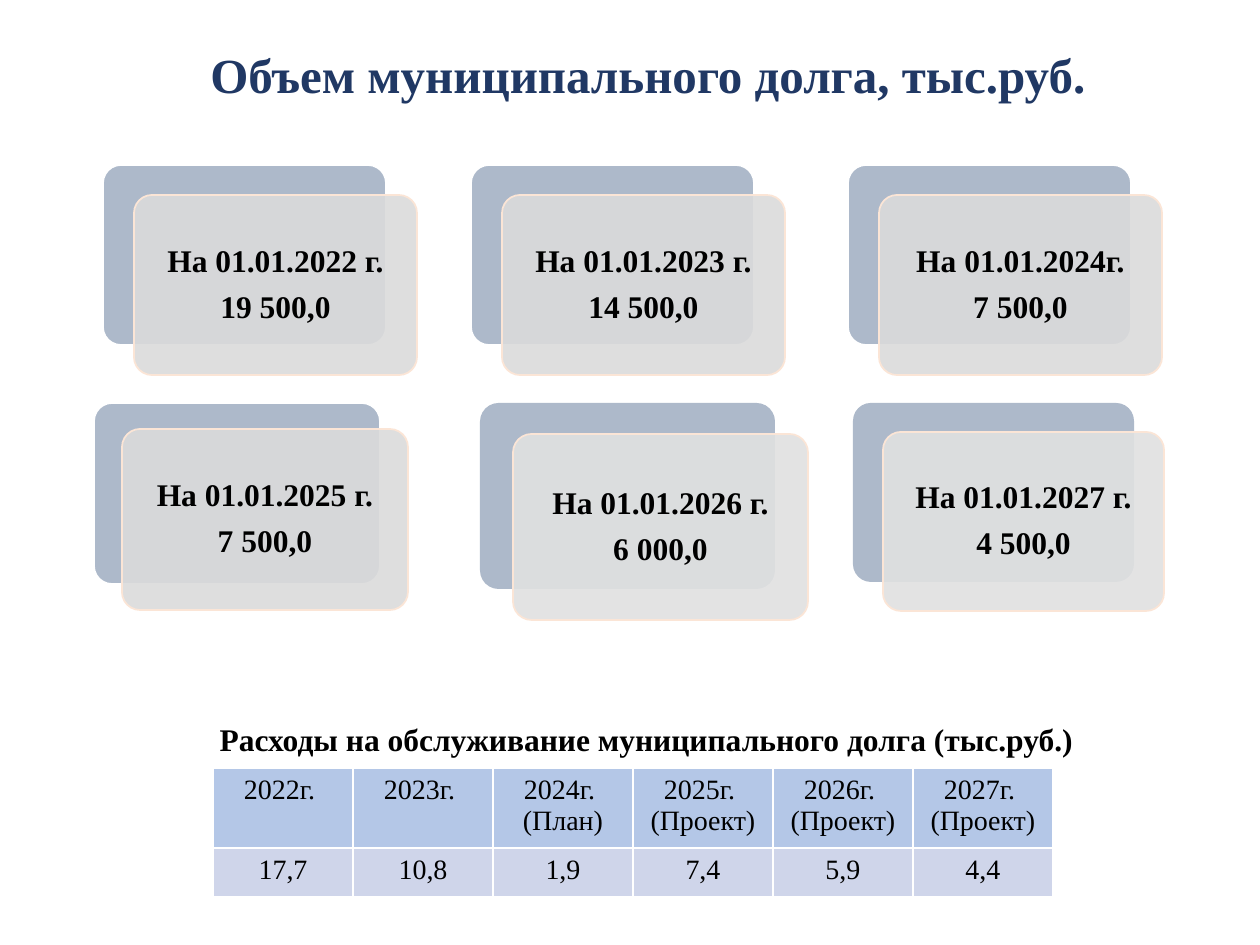
from lxml.etree import SubElement
from pptx import Presentation
from pptx.dml.color import RGBColor
from pptx.enum.shapes import MSO_SHAPE as Preset
from pptx.enum.text import MSO_ANCHOR as Anchor, MSO_AUTO_SIZE as AutoSize, PP_ALIGN as Align
from pptx.oxml.ns import qn
from pptx.util import Emu, Pt

FONT = "Times New Roman"
BLACK, WHITE, NAVY = "000000", "FFFFFF", "203864"
BACK, CARD_EDGE = "ADB9CA", "FBE5D6"
HEADER_FILL, VALUE_FILL = "B4C7E7", "CFD5EA"
PAST = ("DBDBDB", WHITE)
FORECAST = ("E1E1E1", None)

DEBTS = [
    ("На 01.01.2022 г.", "19 500,0", (103, 165, 283, 180), (31, 30), PAST),
    ("На 01.01.2023 г.", "14 500,0", (471, 165, 283, 180), (31, 30), PAST),
    ("На 01.01.2024г.", "7 500,0", (848, 165, 283, 180), (31, 30), PAST),
    ("На 01.01.2025 г.", "7 500,0", (94, 403, 286, 181), (28, 26), PAST),
    ("На 01.01.2026 г.", "6 000,0", (480, 403, 295, 186), (33, 31), FORECAST),
    ("На 01.01.2027 г.", "4 500,0", (853, 403, 281, 179), (30, 29), FORECAST),
]
COSTS = [
    (["2022г. "], "17,7"),
    (["2023г. "], "10,8"),
    (["2024г. ", "(План)"], "1,9"),
    (["2025г. ", "(Проект)"], "7,4"),
    (["2026г. ", "(Проект)"], "5,9"),
    (["2027г. ", "(Проект)"], "4,4"),
]


def px(length):
    """Turn pixels at 126 to the inch into EMU."""
    return Emu(round(length * 914400 / 126))


def color(hex_string):
    """Return a colour from its hex string."""
    return RGBColor.from_string(hex_string)


def write(frame, lines, size, bold=False, ink=BLACK, align=Align.CENTER, spacing=None, after=None):
    """Write one paragraph for each line of text."""
    for index, line in enumerate(lines):
        para = frame.add_paragraph() if index else frame.paragraphs[0]
        para.alignment = align
        if spacing:
            para.line_spacing = spacing
        if after:
            para.space_after = Pt(after)
        span = para.add_run()
        span.text = line
        span.font.name = FONT
        span.font.size = Pt(size)
        span.font.bold = bold
        span.font.color.rgb = color(ink)


def add_heading(page, place, text, size, ink, align, wrap):
    """Add a bold one-line heading."""
    frame = page.shapes.add_textbox(*map(px, place)).text_frame
    frame.word_wrap = wrap
    frame.auto_size = AutoSize.SHAPE_TO_FIT_TEXT
    write(frame, [text], size, True, ink, align)


def add_panel(group, place, fill, edge, opacity=100):
    """Add a rounded panel with an optional outline."""
    panel = group.shapes.add_shape(Preset.ROUNDED_RECTANGLE, *map(px, place))
    panel.adjustments[0] = 0.1
    panel.shadow.inherit = False
    panel.fill.solid()
    panel.fill.fore_color.rgb = color(fill)
    if opacity < 100:
        tint = panel.fill._xPr.find(qn("a:solidFill"))[0]
        SubElement(tint, qn("a:alpha"), val=str(opacity * 1000))
    if edge:
        panel.line.color.rgb = color(edge)
        panel.line.width = Pt(1)
    else:
        panel.line.fill.background()


def add_debt(page, date, amount, place, shift, style):
    """Add a back panel, a shifted card and its text as one group."""
    left, top, width, height = place
    across, down = shift
    tint, back_edge = style
    group = page.shapes.add_group_shape()
    add_panel(group, place, BACK, back_edge)
    left, top = left + across, top + down
    add_panel(group, (left, top, width, height), tint, CARD_EDGE, 90)
    inner = (left + 5, top + 5, width - 10, height - 10)
    frame = group.shapes.add_textbox(*map(px, inner)).text_frame
    frame.word_wrap = True
    frame.vertical_anchor = Anchor.MIDDLE
    frame.margin_left = frame.margin_top = frame.margin_right = frame.margin_bottom = px(9)
    write(frame, [date, amount], 18, True, spacing=0.9, after=7)


def fill_cell(cell, lines, fill):
    """Write a cell with white borders and a plain fill."""
    write(cell.text_frame, lines, 16)
    props = cell._tc.get_or_add_tcPr()
    for side in ("lnL", "lnR", "lnT", "lnB"):
        border = SubElement(props, qn(f"a:{side}"), w=str(Pt(1)))
        SubElement(SubElement(border, qn("a:solidFill")), qn("a:srgbClr"), val=WHITE)
    cell.fill.solid()
    cell.fill.fore_color.rgb = color(fill)


def add_costs(page):
    """Add the table of yearly debt service costs."""
    place = (213, 768, 140 * len(COSTS), 129)
    table = page.shapes.add_table(2, len(COSTS), *map(px, place)).table
    for row, height in zip(table.rows, (80, 49)):
        row.height = px(height)
    for column, (year, value) in enumerate(COSTS):
        table.columns[column].width = px(140)
        fill_cell(table.cell(0, column), year, HEADER_FILL)
        fill_cell(table.cell(1, column), [value], VALUE_FILL)


def main():
    """Build the municipal debt slide."""
    deck = Presentation()
    deck.slide_width, deck.slide_height = px(1260), px(945)
    page = deck.slides.add_slide(deck.slide_layouts[6])
    add_heading(page, (198, 38, 910, 72), "Объем муниципального долга, тыс.руб.",
                28, NAVY, Align.LEFT, False)
    for debt in DEBTS:
        add_debt(page, *debt)
    add_heading(page, (184, 714, 925, 50), "Расходы на обслуживание муниципального долга (тыс.руб.)",
                18, BLACK, Align.CENTER, True)
    add_costs(page)
    deck.save("out.pptx")


if __name__ == "__main__":
    main()
